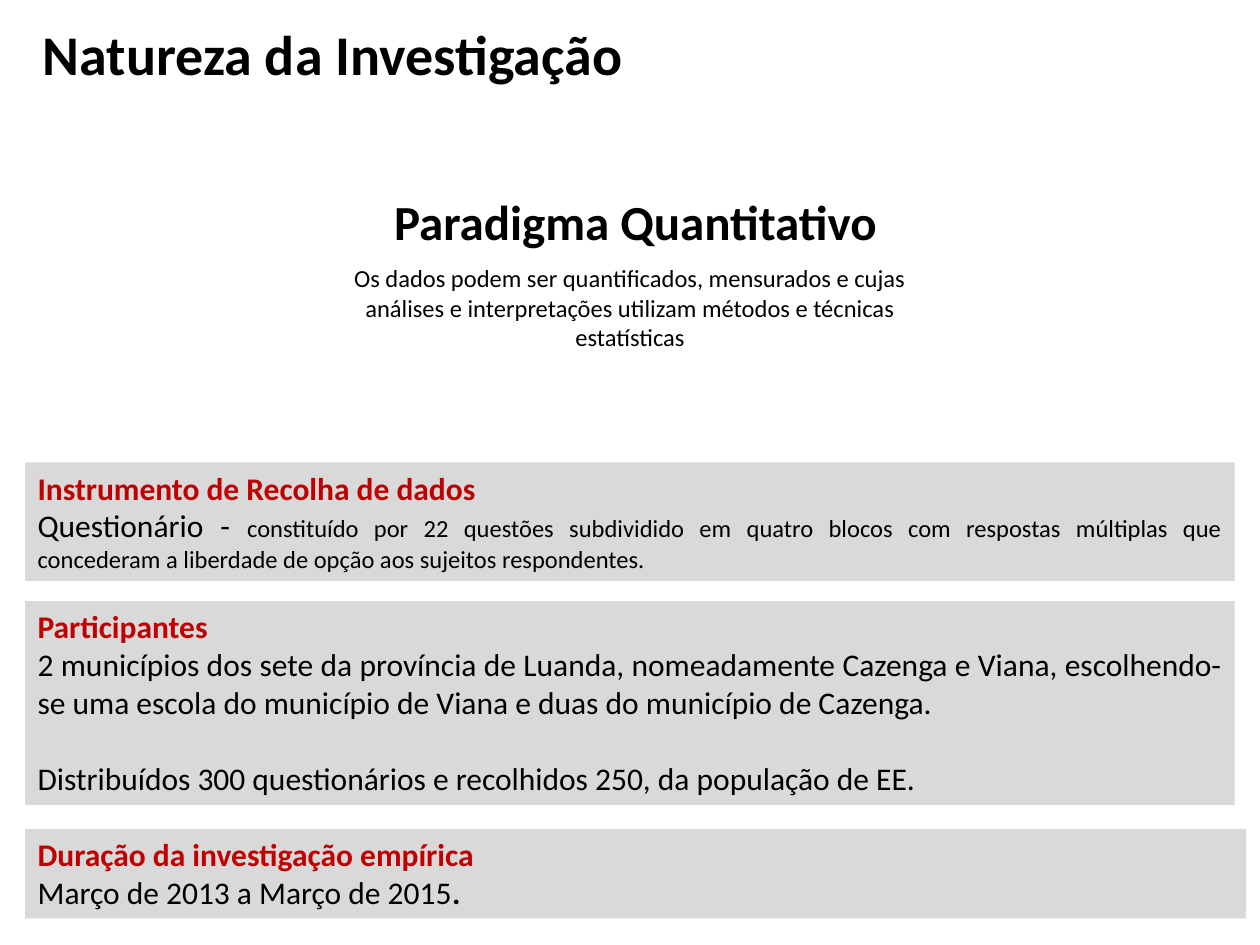
from pptx import Presentation, util as u
from pptx.dml.color import RGBColor
from pptx.enum import shapes, text

BLACK, RED, GREY = "000000", "C00000", "D9D9D9"
LEFT, CENTER, JUSTIFY = text.PP_ALIGN.LEFT, text.PP_ALIGN.CENTER, text.PP_ALIGN.JUSTIFY


def color(value):
    return RGBColor.from_string(value)


def write(shape, paragraphs, alignment=LEFT, wrap=True):
    """Each paragraph is a list of runs: (wording, size, bold, colour)."""
    frame = shape.text_frame
    frame.word_wrap = wrap
    frame.vertical_anchor = text.MSO_ANCHOR.TOP
    for index, runs in enumerate(paragraphs):
        paragraph = frame.add_paragraph() if index else frame.paragraphs[0]
        paragraph.alignment = alignment
        for wording, size, bold, ink in runs:
            run = paragraph.add_run()
            run.text = wording
            run.font.name = "Calibri"
            run.font.size = u.Pt(size)
            run.font.bold = bold
            run.font.color.rgb = color(ink)


presentation = Presentation()
presentation.slide_width = u.Inches(10)
presentation.slide_height = u.Inches(7.5)
slide = presentation.slides.add_slide(presentation.slide_layouts[6])

# Title, paradigm heading and its description
headings = [
    ((0.24, 0.11, 5.08, 0.64), "Natureza da Investigação", 32, True, LEFT, True),
    ((3.03, 1.47, 4.08, 0.57), "Paradigma Quantitativo", 28, True, LEFT, False),
    ((2.5, 2.04, 5, 0.81),
     "Os dados podem ser quantificados, mensurados e cujas análises e "
     "interpretações utilizam métodos e técnicas estatísticas",
     14, False, CENTER, True),
]
for box, wording, size, bold, alignment, wrap in headings:
    shape = slide.shapes.add_textbox(*map(u.Inches, box))
    write(shape, [[(wording, size, bold, BLACK)]], alignment, wrap)

# Grey panels: top, width, height, alignment, red heading, body paragraphs
panels = [
    (3.67, 9.6, 0.94, JUSTIFY, "Instrumento de Recolha de dados", [
        [("Questionário - ", 18, False, BLACK),
         ("constituído por 22 questões subdividido em quatro blocos com "
          "respostas múltiplas que concederam a liberdade de opção aos "
          "sujeitos respondentes.", 14, False, BLACK)],
    ]),
    (4.77, 9.6, 1.62, JUSTIFY, "Participantes", [
        [("2 municípios dos sete da província de Luanda, nomeadamente Cazenga "
          "e Viana, escolhendo-se uma escola do município de Viana e duas do "
          "município de Cazenga.", 18, False, BLACK)],
        [("Distribuídos 300 questionários e recolhidos 250, da população "
          "de EE.", 18, False, BLACK)],
    ]),
    (6.58, 9.69, 0.71, LEFT, "Duração da investigação empírica", [
        [("Março de 2013 a Março de 2015", 18, False, BLACK),
         (".", 18, True, BLACK)],
    ]),
]
for top, width, height, alignment, heading, body in panels:
    shape = slide.shapes.add_shape(
        shapes.MSO_SHAPE.RECTANGLE,
        u.Inches(0.2), u.Inches(top), u.Inches(width), u.Inches(height))
    shape.shadow.inherit = False
    shape.fill.solid()
    shape.fill.fore_color.rgb = color(GREY)
    shape.line.fill.background()
    write(shape, [[(heading, 18, True, RED)], *body], alignment)
    # A second body paragraph stands one line apart
    for paragraph in shape.text_frame.paragraphs[2:]:
        paragraph.space_before = u.Pt(22)

presentation.save("out.pptx")
